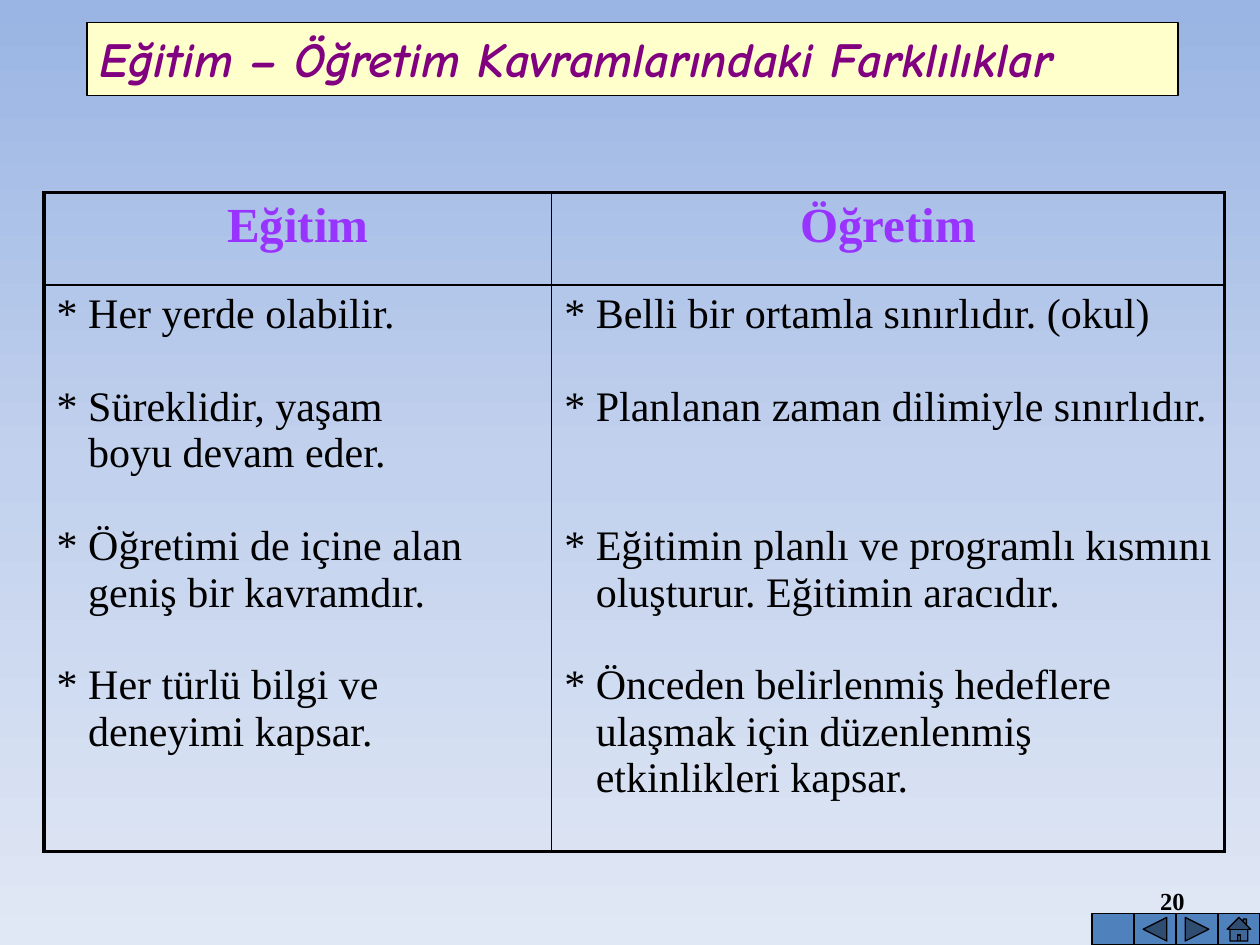
from copy import deepcopy

from lxml import etree
from pptx import Presentation
from pptx import util as u
from pptx.dml.color import RGBColor
from pptx.enum import shapes, text
from pptx.oxml.ns import qn

SKY = [(0, RGBColor(0x9A, 0xB5, 0xE4)),
       (0.5, RGBColor(0xC2, 0xD1, 0xED)),
       (1, RGBColor(0xE1, 0xE8, 0xF5))]
BLACK = RGBColor(0, 0, 0)
CREAM = RGBColor(0xFF, 0xFF, 0xCC)
PURPLE = RGBColor(0x80, 0, 0x80)
VIOLET = RGBColor(0x99, 0x33, 0xFF)
BLUE = RGBColor(0x4F, 0x81, 0xBD)
SERIF, CASUAL = "Times New Roman", "Comic Neue"

GRID = 30            # slide divisions across and down, for the buttons
LINE = 26.5          # height of one body line, in points
OUTER, INNER = 2.25, 1

# Heading, then each point with the number of empty lines above it
CONCEPTS = [
    ("Eğitim", [("Her yerde olabilir.", 0),
                ("Süreklidir, yaşam\vboyu devam eder.", 1),
                ("Öğretimi de içine alan\vgeniş bir kavramdır.", 1),
                ("Her türlü bilgi ve\vdeneyimi kapsar.", 1)]),
    ("Öğretim", [("Belli bir ortamla sınırlıdır. (okul)", 0),
                 ("Planlanan zaman dilimiyle sınırlıdır.", 1),
                 ("Eğitimin planlı ve programlı kısmını\voluşturur. Eğitimin aracıdır.", 2),
                 ("Önceden belirlenmiş hedeflere\vulaşmak için düzenlenmiş\vetkinlikleri kapsar.", 1)]),
]


def write(paragraph, wording, size, color=BLACK, font=SERIF, bold=False,
          italic=False, align=text.PP_ALIGN.LEFT, before=0, bullet=None):
    paragraph.text = wording
    paragraph.alignment = align
    if before:
        paragraph.space_before = u.Pt(before)
    if bullet:
        hang = u.Pt(size * 0.75)
        properties = paragraph._p.get_or_add_pPr()
        properties.set("marL", str(hang))
        properties.set("indent", str(-hang))
        etree.SubElement(properties, qn("a:buFont")).set("typeface", font)
        etree.SubElement(properties, qn("a:buChar")).set("char", bullet)
    for run in paragraph.runs:
        run.font.size, run.font.name = u.Pt(size), font
        run.font.bold, run.font.italic = bold, italic
        run.font.color.rgb = color


def box_of(left, top, width, height):
    return [u.Inches(side) for side in (left, top, width, height)]


def paint_background(slide):
    fill = slide.background.fill
    fill.gradient()
    fill.gradient_angle = 270
    stop_list = slide._element.find(".//" + qn("a:gsLst"))
    stop_list.append(deepcopy(stop_list[-1]))
    for stop, (position, color) in zip(fill.gradient_stops, SKY):
        stop.position = position
        stop.color.rgb = color


def outlined(slide, kind, box, color):
    shape = slide.shapes.add_shape(kind, *box)
    shape.shadow.inherit = False
    shape.fill.solid()
    shape.fill.fore_color.rgb = color
    shape.line.color.rgb = BLACK
    shape.line.width = u.Pt(0.75)
    return shape


def add_title(slide, box):
    frame = outlined(slide, shapes.MSO_SHAPE.RECTANGLE, box, CREAM).text_frame
    frame.word_wrap = True
    frame.vertical_anchor = text.MSO_ANCHOR.TOP
    write(frame.paragraphs[0], "Eğitim – Öğretim Kavramlarındaki Farklılıklar",
          28, PURPLE, CASUAL, bold=True, italic=True)


def set_borders(cell, **widths):
    properties = cell._tc.get_or_add_tcPr()
    for position, (side, width) in enumerate(widths.items()):
        edge = etree.Element(qn("a:ln" + side), w=str(u.Pt(width)))
        paint = etree.SubElement(edge, qn("a:solidFill"))
        etree.SubElement(paint, qn("a:srgbClr")).set("val", str(BLACK))
        properties.insert(position, edge)


def add_comparison(slide, box, column_share, header_share):
    left, top, width, height = box
    table = slide.shapes.add_table(2, len(CONCEPTS), *box).table
    table.first_row = table.horz_banding = False
    for column, share in zip(table.columns, (column_share, 1 - column_share)):
        column.width = int(width * share)
    for row, share in zip(table.rows, (header_share, 1 - header_share)):
        row.height = int(height * share)

    for index, (heading, points) in enumerate(CONCEPTS):
        header, body = table.cell(0, index), table.cell(1, index)
        write(header.text_frame.paragraphs[0], heading, 28, VIOLET, bold=True,
              align=text.PP_ALIGN.CENTER)
        frame = body.text_frame
        for number, (point, gap) in enumerate(points):
            paragraph = frame.add_paragraph() if number else frame.paragraphs[0]
            write(paragraph, point, 24, before=gap * LINE, bullet="*")
        sides = {"L": INNER if index else OUTER,
                 "R": OUTER if index else INNER}
        for cell, ends in ((header, {"T": OUTER, "B": INNER}),
                           (body, {"T": INNER, "B": OUTER})):
            cell.fill.background()
            set_borders(cell, **sides, **ends)


def add_page_number(slide, box):
    frame = slide.shapes.add_textbox(*box).text_frame
    frame.word_wrap = True
    frame.vertical_anchor = text.MSO_ANCHOR.MIDDLE
    write(frame.paragraphs[0], "20", 14, bold=True, align=text.PP_ALIGN.RIGHT)


def add_navigation(slide, box):
    kinds = shapes.MSO_SHAPE
    buttons = (kinds.ACTION_BUTTON_CUSTOM, kinds.ACTION_BUTTON_BACK_OR_PREVIOUS,
               kinds.ACTION_BUTTON_FORWARD_OR_NEXT, kinds.ACTION_BUTTON_HOME)
    left, top, width, height = box
    step = width // len(buttons)
    for index, kind in enumerate(buttons):
        outlined(slide, kind, (left + index * step, top, step, height), BLUE)


def main():
    deck = Presentation()
    deck.slide_width, deck.slide_height = u.Inches(10), u.Inches(7.5)
    column, row = deck.slide_width // GRID, deck.slide_height // GRID
    slide = deck.slides.add_slide(deck.slide_layouts[6])
    paint_background(slide)
    add_page_number(slide, box_of(7.17, 6.95, 2.33, 0.4))
    add_navigation(slide, (26 * column, 29 * row, 4 * column, row))
    add_title(slide, box_of(0.69, 0.18, 8.66, 0.58))
    add_comparison(slide, box_of(0.35, 1.53, 9.37, 5.23),
                   column_share=0.43, header_share=0.14)
    deck.save("out.pptx")


if __name__ == "__main__":
    main()
